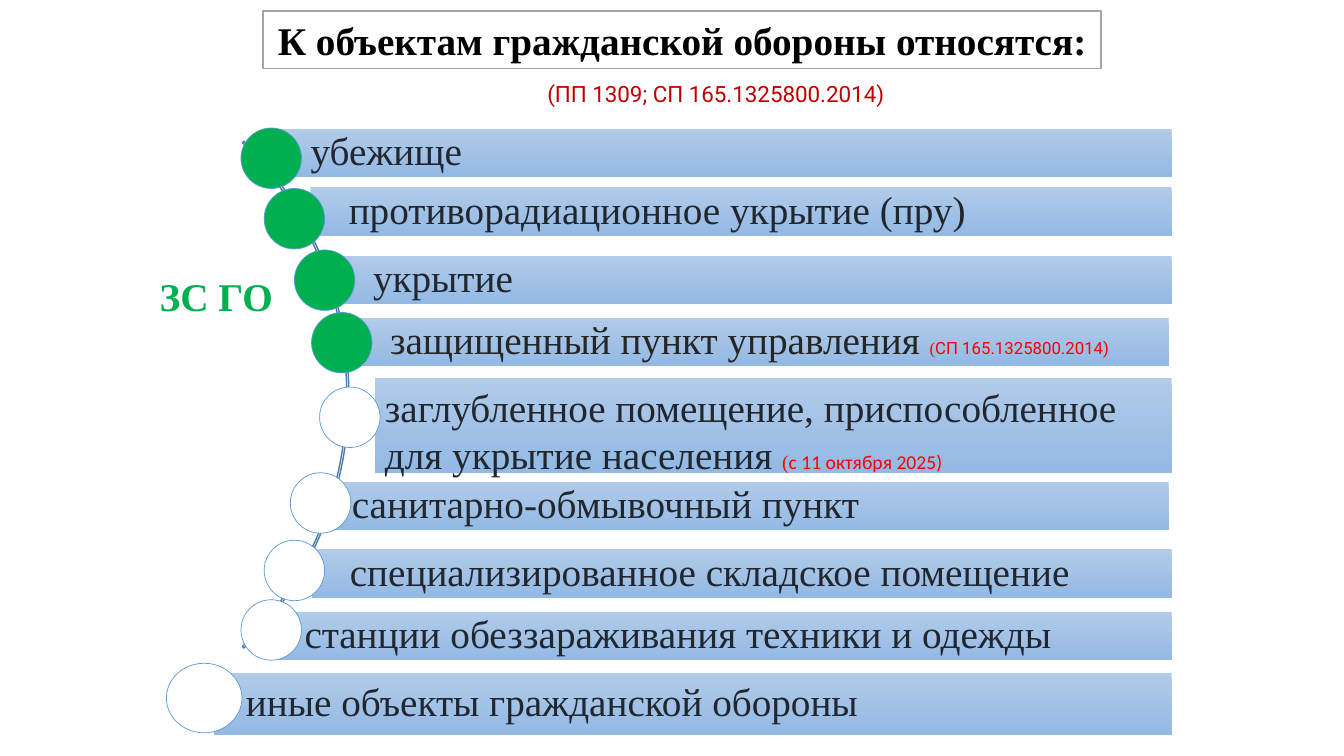
from dataclasses import dataclass

from lxml import etree
from pptx import Presentation
from pptx.dml.color import RGBColor
from pptx.enum.shapes import MSO_SHAPE
from pptx.enum.text import MSO_ANCHOR, PP_ALIGN
from pptx.oxml.ns import qn
from pptx.util import Inches, Pt

RECTANGLE = MSO_SHAPE.RECTANGLE
OVAL = MSO_SHAPE.OVAL
BLOCK_ARC = MSO_SHAPE.BLOCK_ARC
TOP = MSO_ANCHOR.TOP
MIDDLE = MSO_ANCHOR.MIDDLE
LEFT = PP_ALIGN.LEFT
CENTER = PP_ALIGN.CENTER


@dataclass(frozen=True)
class Theme:
    serif: str = "Times New Roman"
    roboto: str = "Roboto"
    calibri: str = "Calibri"
    main_size: float = 28
    reference_size: float = 16
    date_size: float = 14
    note_size: float = 12
    black: str = "000000"
    white: str = "FFFFFF"
    ink: str = "22272F"
    dark_grey: str = "262626"
    frame: str = "A5A5A5"
    green: str = "00B050"
    red: str = "FF0000"
    dark_red: str = "C00000"
    arc: str = "497CAB"
    circle_line: str = "5B9BD5"
    bar_top: str = "B1CBE9"
    bar_bottom: str = "93B9E4"


THEME = Theme()


@dataclass(frozen=True)
class Span:
    text: str
    size: float = THEME.main_size
    color: str = THEME.ink
    font: str = THEME.serif
    bold: bool = False


@dataclass(frozen=True)
class Item:
    spans: tuple[Span, ...]
    left: float
    top: float
    circle_left: float
    circle_top: float
    right: float = 11.62
    height: float = 0.48
    circle_width: float = 0.6
    circle_height: float = 0.6
    circle_color: str = THEME.white
    insets: tuple[float, float] = (0.38, 0.08)
    anchor: MSO_ANCHOR = MIDDLE
    line_spacing: float = 0.9


ITEMS = (
    Item((Span("убежище"),), 2.7, 1.28, 2.39, 1.27, circle_color=THEME.green),
    Item((Span("противорадиационное укрытие (пру)"),), 3.08, 1.86, 2.62, 1.87,
         circle_color=THEME.green),
    Item((Span("укрытие"),), 3.32, 2.54, 2.92, 2.48, circle_color=THEME.green),
    Item((Span("защищенный пункт управления ", color=THEME.dark_grey),
          Span("(", THEME.note_size, THEME.red),
          Span("СП 165.1325800.2014)", THEME.note_size, THEME.red, THEME.roboto)),
         3.49, 3.15, 3.09, 3.1, right=11.59, circle_color=THEME.green),
    Item((Span("заглубленное помещение, приспособленное для укрытие населения "),
          Span("(", THEME.date_size, THEME.red),
          Span("с 11 октября 2025)", THEME.date_size, THEME.red, THEME.calibri)),
         3.72, 3.75, 3.17, 3.84, height=0.94, insets=(0.1, 0.05),
         anchor=TOP, line_spacing=1.0),
    Item((Span("санитарно-обмывочный пункт"),), 3.11, 4.78, 2.88, 4.69, right=11.59),
    Item((Span("специализированное складское помещение"),), 3.09, 5.45, 2.62, 5.36),
    Item((Span("станции обеззараживания техники и одежды"),), 2.64, 6.07, 2.39, 5.95),
    Item((Span("иные объекты гражданской обороны"),), 2.12, 6.68, 1.65, 6.58,
         height=0.61, circle_width=0.75, circle_height=0.69, insets=(0.32, 0.04)),
)


def add_plain_shape(slide, preset, left: float, top: float, width: float, height: float,
                    fill: str | None = None, line: str | None = None,
                    line_width: float = 1):
    shape = slide.shapes.add_shape(preset, Inches(left), Inches(top),
                                   Inches(width), Inches(height))
    shape.shadow.inherit = False
    if fill:
        shape.fill.solid()
        shape.fill.fore_color.rgb = RGBColor.from_string(fill)
    else:
        shape.fill.background()
    if line:
        shape.line.color.rgb = RGBColor.from_string(line)
        shape.line.width = Pt(line_width)
    else:
        shape.line.fill.background()
    return shape


def write_text(shape, spans: tuple[Span, ...], *, align=LEFT, anchor=TOP,
               insets: tuple[float, float] = (0.1, 0.05), wrap: bool = True,
               line_spacing: float = 1.0) -> None:
    frame = shape.text_frame
    frame.word_wrap = wrap
    frame.vertical_anchor = anchor
    left_inset, other_inset = insets
    frame.margin_left = Inches(left_inset)
    frame.margin_right = Inches(0.1 if anchor == TOP else other_inset)
    frame.margin_top = frame.margin_bottom = Inches(other_inset)
    paragraph = frame.paragraphs[0]
    paragraph.alignment = align
    paragraph.line_spacing = line_spacing
    for span in spans:
        run = paragraph.add_run()
        run.text = span.text
        run.font.name = span.font
        run.font.size = Pt(span.size)
        run.font.bold = span.bold
        run.font.color.rgb = RGBColor.from_string(span.color)


def add_label(slide, left: float, top: float, width: float, height: float,
              span: Span, align=LEFT):
    box = slide.shapes.add_textbox(Inches(left), Inches(top), Inches(width), Inches(height))
    write_text(box, (span,), align=align)
    return box


def outline_text(box, color: str, width: float) -> None:
    properties = box.text_frame.paragraphs[0].runs[0].font._element
    line = etree.Element(qn("a:ln"), w=str(Pt(width)))
    fill = etree.SubElement(line, qn("a:solidFill"))
    etree.SubElement(fill, qn("a:srgbClr"), val=color)
    properties.insert(0, line)


def add_item(slide, item: Item) -> None:
    bar = add_plain_shape(slide, RECTANGLE, item.left, item.top,
                          item.right - item.left, item.height)
    bar.fill.gradient()
    bar.fill.gradient_angle = 270
    for stop, color in zip(bar.fill.gradient_stops, (THEME.bar_top, THEME.bar_bottom)):
        stop.color.rgb = RGBColor.from_string(color)
    write_text(bar, item.spans, anchor=item.anchor, insets=item.insets,
               line_spacing=item.line_spacing)
    add_plain_shape(slide, OVAL, item.circle_left, item.circle_top, item.circle_width,
                    item.circle_height, item.circle_color, THEME.circle_line, 0.5)


def main() -> None:
    presentation = Presentation()
    presentation.slide_width = Inches(13.33)
    presentation.slide_height = Inches(7.5)
    slide = presentation.slides.add_slide(presentation.slide_layouts[6])

    title = add_plain_shape(slide, RECTANGLE, 2.61, 0.11, 8.31, 0.57,
                            THEME.white, THEME.frame)
    write_text(title, (Span("К объектам гражданской обороны относятся:",
                            color=THEME.black, bold=True),), align=CENTER, wrap=False)
    add_label(slide, 5.33, 0.75, 3.68, 0.37,
              Span("(ПП 1309; СП 165.1325800.2014)", THEME.reference_size,
                   THEME.dark_red, THEME.roboto))

    arc = add_plain_shape(slide, BLOCK_ARC, -3.65, 0.36, 7.11, 7.11, line=THEME.arc)
    for index, value in enumerate((189, 27, 0.003)):
        arc.adjustments[index] = value
    for item in ITEMS:
        add_item(slide, item)

    shelters = add_label(slide, 1.29, 2.65, 1.71, 0.57,
                         Span("ЗС ГО", color=THEME.green, bold=True), CENTER)
    outline_text(shelters, THEME.green, 1.75)
    presentation.save("out.pptx")


if __name__ == "__main__":
    main()
